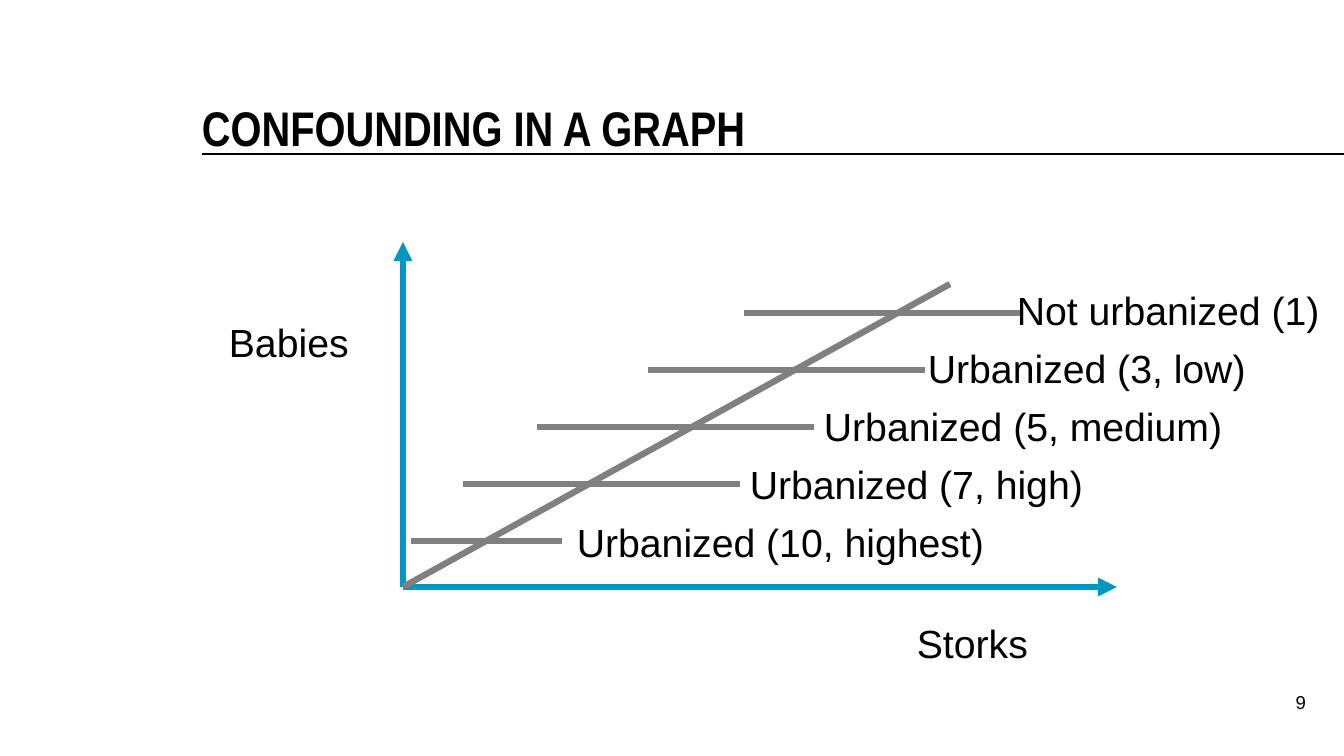
from lxml import etree
from pptx import Presentation
from pptx.dml.color import RGBColor
from pptx.enum.shapes import MSO_CONNECTOR
from pptx.enum.text import MSO_ANCHOR, PP_ALIGN
from pptx.oxml.ns import qn
from pptx.util import Pt

STRAIGHT = MSO_CONNECTOR.STRAIGHT
BOTTOM, TOP = MSO_ANCHOR.BOTTOM, MSO_ANCHOR.TOP
LEFT, RIGHT = PP_ALIGN.LEFT, PP_ALIGN.RIGHT

BLACK = RGBColor(0x00, 0x00, 0x00)
BLUE = RGBColor(0x00, 0x98, 0xC3)
GREY = RGBColor(0x80, 0x80, 0x80)

# Content
TITLE = "CONFOUNDING IN A GRAPH"
PAGE_NUMBER = "9"
AXIS_LABELS = [  # text, left, top, width
    ("Babies", 219, 313, 168),
    ("Storks", 907, 614, 176),
]
STRATA = [  # label, label left, label width, line start, line end
    ("Not urbanized (1)", 1007, 333, 744, 1020),
    ("Urbanized (3, low)", 918, 361, 648, 925),
    ("Urbanized (5, medium)", 814, 428, 537, 814),
    ("Urbanized (7, high)", 740, 387, 463, 740),
    ("Urbanized (10, highest)", 567, 439, 411, 562),
]

# Layout in px
EMU_PER_PX = 914400 / 100.8
ORIGIN = (403, 587)
Y_AXIS_END = (403, 242)
X_AXIS_END = (1117, 587)
TREND_END = (950, 284)
LABEL_HEIGHT = 57
FIRST_LABEL_TOP, LABEL_STEP = 281, 58
FIRST_LINE_Y, LINE_STEP = 313, 57


def px(value):
    return round(value * EMU_PER_PX)


def add_line(start, end, color, width=4.5, arrow=False):
    line = slide.shapes.add_connector(STRAIGHT, *map(px, start + end))
    line.line.color.rgb = color
    line.line.width = Pt(width)
    if arrow:
        outline = line.line._get_or_add_ln()
        etree.SubElement(outline, qn("a:tailEnd"), type="triangle")
    etree.SubElement(line._element.spPr, qn("a:effectLst"))


def write(frame, text, size, font="Arial", bold=False, align=LEFT, spacing=None):
    frame.word_wrap = True
    paragraph = frame.paragraphs[0]
    paragraph.alignment = align
    paragraph.space_before = Pt(0)
    if spacing:
        paragraph.line_spacing = Pt(spacing)
    run = paragraph.add_run()
    run.text = text
    run.font.name = font
    run.font.size = Pt(size)
    run.font.bold = bold
    run.font.color.rgb = BLACK


def add_text(text, left, top, width, height=LABEL_HEIGHT, size=28, **style):
    box = slide.shapes.add_textbox(*map(px, (left, top, width, height)))
    box.text_frame.vertical_anchor = TOP
    write(box.text_frame, text, size, **style)
    return box


prs = Presentation()
prs.slide_width, prs.slide_height = px(1344), px(756)
slide = prs.slides.add_slide(prs.slide_layouts[5])

# Title, rule and page number
title = slide.shapes.title
title.left, title.top, title.width, title.height = map(px, (202, 76, 1101, 80))
heading = title.text_frame
heading.vertical_anchor = BOTTOM
heading.margin_left = heading.margin_right = 0
heading.margin_top = heading.margin_bottom = 0
write(heading, TITLE, 34.7, font="Arial Narrow", bold=True, spacing=33.3)
add_line((202, 154), (1344, 154), BLACK, width=1)
page = add_text(PAGE_NUMBER, 1251, 680, 55, 52, size=13.3, align=RIGHT, spacing=20)
page.text_frame.margin_right = 0

# Axes and overall trend
add_line(ORIGIN, Y_AXIS_END, BLUE, arrow=True)
add_line(ORIGIN, X_AXIS_END, BLUE, arrow=True)
add_line(ORIGIN, TREND_END, GREY)
for text, left, top, width in AXIS_LABELS:
    add_text(text, left, top, width)

# One flat line per urbanization level
for i, (label, left, width, start, end) in enumerate(STRATA):
    add_text(label, left, FIRST_LABEL_TOP + i * LABEL_STEP, width)
    y = FIRST_LINE_Y + i * LINE_STEP
    add_line((start, y), (end, y), GREY)

prs.save("out.pptx")
